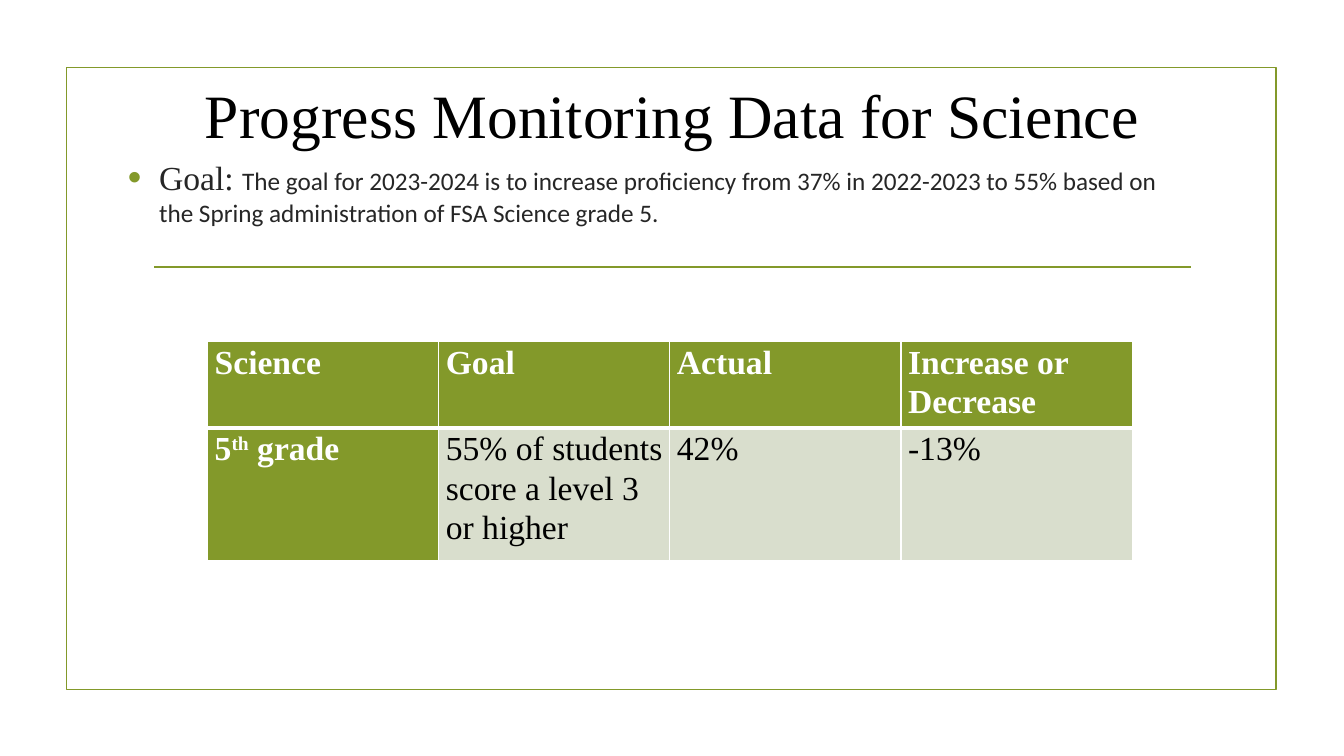
from dataclasses import dataclass

import pptx
import pptx.dml.color
import pptx.enum.shapes
import pptx.enum.text
import pptx.oxml
import pptx.oxml.ns
import pptx.util
from pptx.util import Inches


@dataclass(frozen=True)
class Theme:
    green: str = "83992A"
    pale_green: str = "D9DECD"
    white: str = "FFFFFF"
    black: str = "000000"
    dark_gray: str = "262626"
    serif: str = "Times New Roman"
    sans: str = "Calibri"
    title_size: int = 44
    large_size: int = 24
    body_size: int = 18
    rule_width: float = 1.25


THEME = Theme()
HEADER = ["Science", "Goal", "Actual", "Increase or Decrease"]
GRADE_ROW = ["5th grade", "55% of students score a level 3 or higher", "42%", "-13%"]


def rgb(color):
    return pptx.dml.color.RGBColor.from_string(color)


def format_font(font, name, size, color, bold=False):
    font.name = name
    font.size = pptx.util.Pt(size)
    font.color.rgb = rgb(color)
    font.bold = bold


def add_xml(parent, tag, content="", attributes=""):
    namespace = pptx.oxml.ns.nsdecls("a")
    parent.append(pptx.oxml.parse_xml(
        f"<a:{tag} {namespace} {attributes}>{content}</a:{tag}>"))


def format_line(line):
    line.color.rgb = rgb(THEME.green)
    line.width = pptx.util.Pt(THEME.rule_width)


def add_frame(slide):
    frame = slide.shapes.add_shape(
        pptx.enum.shapes.MSO_SHAPE.RECTANGLE,
        Inches(0.66), Inches(0.67), Inches(12), Inches(6.17))
    frame.shadow.inherit = False
    frame.fill.background()
    format_line(frame.line)


def add_divider(slide):
    divider = slide.shapes.add_connector(
        pptx.enum.shapes.MSO_CONNECTOR.STRAIGHT,
        Inches(1.53), Inches(2.65), Inches(11.81), Inches(2.65))
    format_line(divider.line)
    add_xml(divider._element.spPr, "effectLst")


def set_title(slide, text):
    title = slide.shapes.title
    title.left, title.top = Inches(1.42), Inches(0.44)
    title.width, title.height = Inches(10.5), Inches(1.37)
    title.text_frame.text = text
    title.text_frame.vertical_anchor = pptx.enum.text.MSO_ANCHOR.MIDDLE
    paragraph = title.text_frame.paragraphs[0]
    paragraph.alignment = pptx.enum.text.PP_ALIGN.CENTER
    format_font(paragraph.runs[0].font, THEME.serif, THEME.title_size, THEME.black)


def add_goal(slide, label, statement):
    box = slide.shapes.add_textbox(
        Inches(1.17), Inches(1.51), Inches(10.5), Inches(3.63))
    box.text_frame.word_wrap = True
    paragraph = box.text_frame.paragraphs[0]
    paragraph.space_after = pptx.util.Pt(6)
    properties = paragraph._p.get_or_add_pPr()
    properties.set("marL", str(Inches(0.31)))
    properties.set("indent", str(Inches(-0.31)))
    add_xml(properties, "buClr", f'<a:srgbClr val="{THEME.green}"/>')
    add_xml(properties, "buSzPct", attributes='val="115000"')
    add_xml(properties, "buFont", attributes='typeface="Arial"')
    add_xml(properties, "buChar", attributes='char="•"')
    for text, name, size in ((label, THEME.serif, THEME.large_size),
                             (statement, THEME.sans, THEME.body_size)):
        run = paragraph.add_run()
        run.text = text
        format_font(run.font, name, size, THEME.dark_gray)


def set_borders(cell, widths):
    """Draw white borders; widths are points for left, right, top and bottom."""
    properties = cell._tc.get_or_add_tcPr()
    fill = f'<a:solidFill><a:srgbClr val="{THEME.white}"/></a:solidFill>'
    for side, width in zip("LRTB", widths):
        add_xml(properties, f"ln{side}", fill, f'w="{pptx.util.Pt(width)}"')


def fill_cell(cell, text, is_heading):
    cell.margin_left = cell.margin_right = Inches(0.07)
    cell.margin_top = cell.margin_bottom = 0
    paragraph = cell.text_frame.paragraphs[0]
    paragraph.line_spacing = 1.07
    before, ordinal, after = text.partition("th ")
    pieces = [before, "th", " " + after] if ordinal else [text]
    for piece in pieces:
        run = paragraph.add_run()
        run.text = piece
        format_font(run.font, THEME.serif, THEME.large_size,
                    THEME.white if is_heading else THEME.black, is_heading)
        if piece == "th":
            run._r.get_or_add_rPr().set("baseline", "30000")


def add_score_table(slide, rows):
    table = slide.shapes.add_table(
        len(rows), len(rows[0]),
        Inches(2.06), Inches(3.39), Inches(9.17), Inches(1.97)).table
    table.first_col = True
    for row, height in zip(table.rows, (0.65, 1.32)):
        row.height = Inches(height)
    for row_index, texts in enumerate(rows):
        for column_index, text in enumerate(texts):
            cell = table.cell(row_index, column_index)
            is_heading = row_index == 0 or column_index == 0
            fill_cell(cell, text, is_heading)
            set_borders(cell, (1, 1, 1, 3) if row_index == 0 else (1, 1, 3, 1))
            cell.fill.solid()
            cell.fill.fore_color.rgb = rgb(
                THEME.green if is_heading else THEME.pale_green)


def main():
    presentation = pptx.Presentation()
    presentation.slide_width = Inches(13.33)
    presentation.slide_height = Inches(7.5)
    slide = presentation.slides.add_slide(presentation.slide_layouts[5])
    add_frame(slide)
    add_divider(slide)
    set_title(slide, "Progress Monitoring Data for Science")
    add_goal(slide, "Goal: ",
             "The goal for 2023-2024 is to increase proficiency from 37% in "
             "2022-2023 to 55% based on the Spring administration of FSA "
             "Science grade 5.")
    add_score_table(slide, [HEADER, GRADE_ROW])
    presentation.save("out.pptx")


if __name__ == "__main__":
    main()
